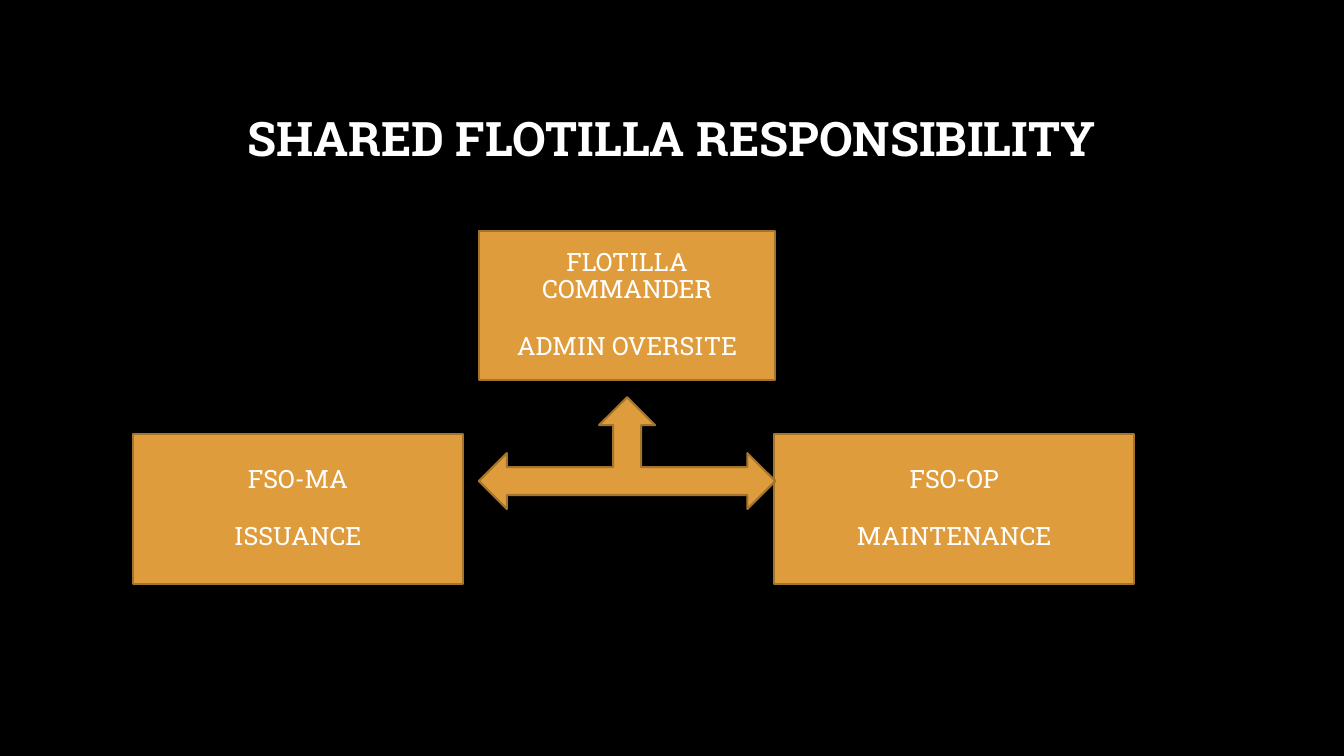
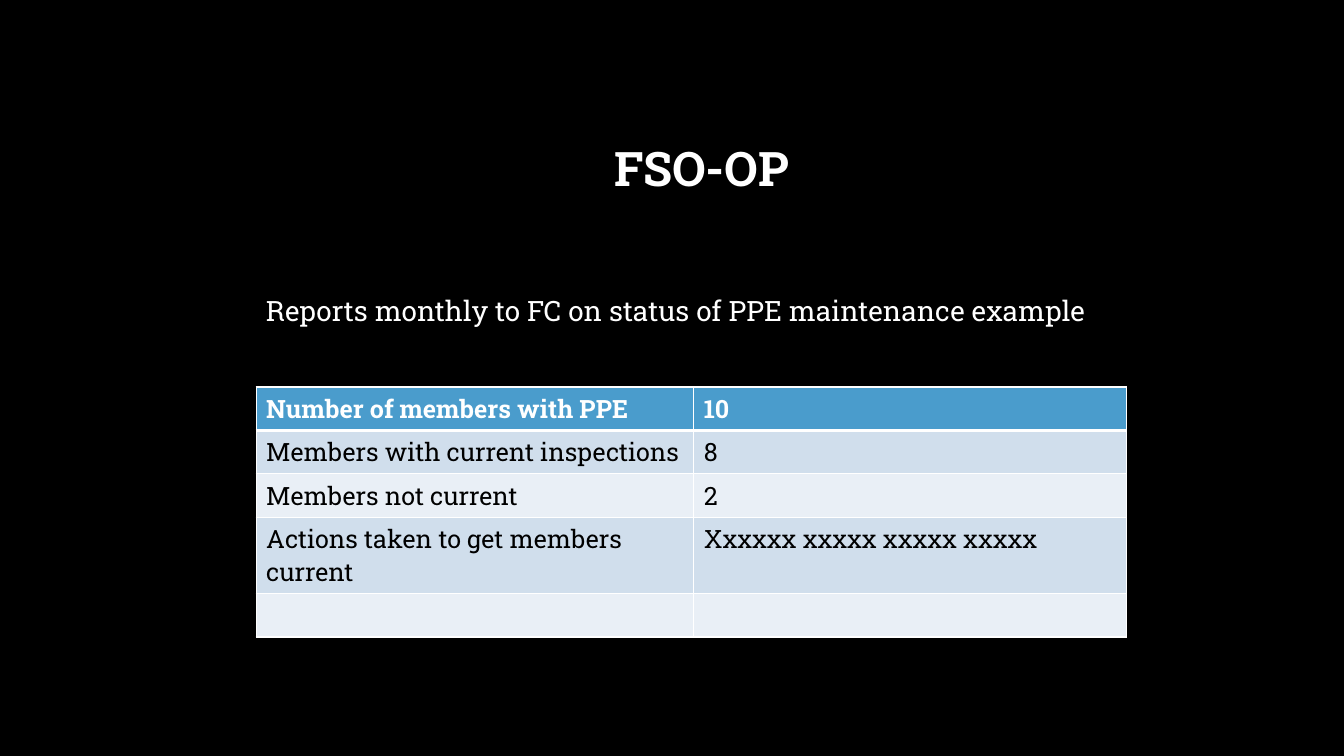
from lxml import etree
from pptx import Presentation, util as u
from pptx.dml.color import RGBColor
from pptx.enum import shapes, text
from pptx.oxml import ns

BLACK = RGBColor(0x00, 0x00, 0x00)
WHITE = RGBColor(0xFF, 0xFF, 0xFF)
GOLD = RGBColor(0xDE, 0x9C, 0x3C)
BRONZE = RGBColor(0xA4, 0x73, 0x2C)
BLUE = RGBColor(0x4A, 0x9C, 0xCC)
BANDS = (RGBColor(0xE9, 0xEF, 0xF6), RGBColor(0xD0, 0xDE, 0xEC))
FONT = "Roboto Slab"
CENTER = text.PP_ALIGN.CENTER
MIDDLE = text.MSO_ANCHOR.MIDDLE


class Deck:
    """Holds the shared style and the current slide."""

    def __init__(self):
        self.prs = Presentation()
        self.prs.slide_width = u.Inches(13.33)
        self.prs.slide_height = u.Inches(7.5)

    def slide(self):
        self.s = self.prs.slides.add_slide(self.prs.slide_layouts[6])
        fill = self.s.background.fill
        fill.solid()
        fill.fore_color.rgb = BLACK

    def run(self, p, words, size=18, color=WHITE, bold=False):
        r = p.add_run()
        r.text = words
        r.font.name = FONT
        r.font.size = u.Pt(size)
        r.font.bold = bold
        r.font.color.rgb = color

    def text(self, at, words, size=20, bold=False):
        tf = self.s.shapes.add_textbox(*map(u.Inches, at)).text_frame
        tf.word_wrap = True
        p = tf.paragraphs[0]
        self.run(p, words, size, bold=bold)
        return tf

    def title(self, at, words):
        tf = self.text(at, words, 34, True)
        tf.vertical_anchor = MIDDLE
        p = tf.paragraphs[0]
        p.alignment = CENTER
        p.line_spacing = 0.9

    def shape(self, kind, at):
        sp = self.s.shapes.add_shape(kind, *map(u.Inches, at))
        sp.shadow.inherit = False
        sp.fill.solid()
        sp.fill.fore_color.rgb = GOLD
        sp.line.color.rgb = BRONZE
        sp.line.width = u.Pt(1.5)
        return sp

    def role(self, at, name, duty):
        sp = self.shape(shapes.MSO_SHAPE.FLOWCHART_PROCESS, at)
        tf = sp.text_frame
        tf.word_wrap = True
        tf.vertical_anchor = MIDDLE
        for p, words in ((tf.paragraphs[0], name), (tf.add_paragraph(), duty)):
            p.alignment = CENTER
            p.line_spacing = 0.9
            self.run(p, words)
        p.space_before = u.Pt(21.5)

    def borders(self, cell, **widths):
        props = cell._tc.get_or_add_tcPr()
        for i, side in enumerate("LRTB"):
            ln = etree.Element(ns.qn(f"a:ln{side}"), w=str(u.Pt(widths.get(side, 1))))
            fill = etree.SubElement(ln, ns.qn("a:solidFill"))
            etree.SubElement(fill, ns.qn("a:srgbClr"), val=str(WHITE))
            props.insert(i, ln)

    def table(self, at, rows, widths, heights):
        size = (sum(widths), sum(heights))
        frame = self.s.shapes.add_table(len(rows), len(widths), *map(u.Inches, at + size))
        tbl = frame.table
        tbl.horz_banding = False
        for col, width in zip(tbl.columns, widths):
            col.width = u.Inches(width)
        for i, (row, height) in enumerate(zip(rows, heights)):
            tbl.rows[i].height = u.Inches(height)
            head = i == 0
            for j, words in enumerate(row):
                cell = tbl.cell(i, j)
                cell.fill.solid()
                cell.fill.fore_color.rgb = BLUE if head else BANDS[i % 2]
                self.borders(cell, T=3 if i == 1 else 1, B=3 if head else 1)
                if words:
                    p = cell.text_frame.paragraphs[0]
                    self.run(p, words, color=WHITE if head else BLACK, bold=head)


def responsibility(d):
    d.slide()
    d.title((1, 0.67, 11.32, 1.45), "SHARED FLOTILLA RESPONSIBILITY")
    height = 1.48
    d.role((4.75, 2.29, 2.94, height), "FLOTILLA COMMANDER", "ADMIN OVERSITE")
    d.role((1.32, 4.31, 3.27, height), "FSO-MA", "ISSUANCE")
    d.role((7.68, 4.31, 3.57, height), "FSO-OP", "MAINTENANCE")
    d.shape(shapes.MSO_SHAPE.LEFT_RIGHT_UP_ARROW, (4.75, 3.94, 2.94, 1.11))


def report(d):
    d.slide()
    d.title((1.3, 0.8, 11.32, 1.79), "FSO-OP")
    rows = [
        ("Number of members with PPE", "10"),
        ("Members with current inspections", "8"),
        ("Members not current", "2"),
        ("Actions taken to get members current", "Xxxxxx xxxxx xxxxx xxxxx"),
        ("", ""),
    ]
    d.table((2.54, 3.84), rows, (4.34, 4.29), (0.43, 0.43, 0.43, 0.76, 0.43))
    d.text((2.54, 2.86, 9.7, 0.44), "Reports monthly to FC on status of PPE maintenance example")


def main():
    d = Deck()
    responsibility(d)
    report(d)
    d.prs.save("out.pptx")


if __name__ == "__main__":
    main()
